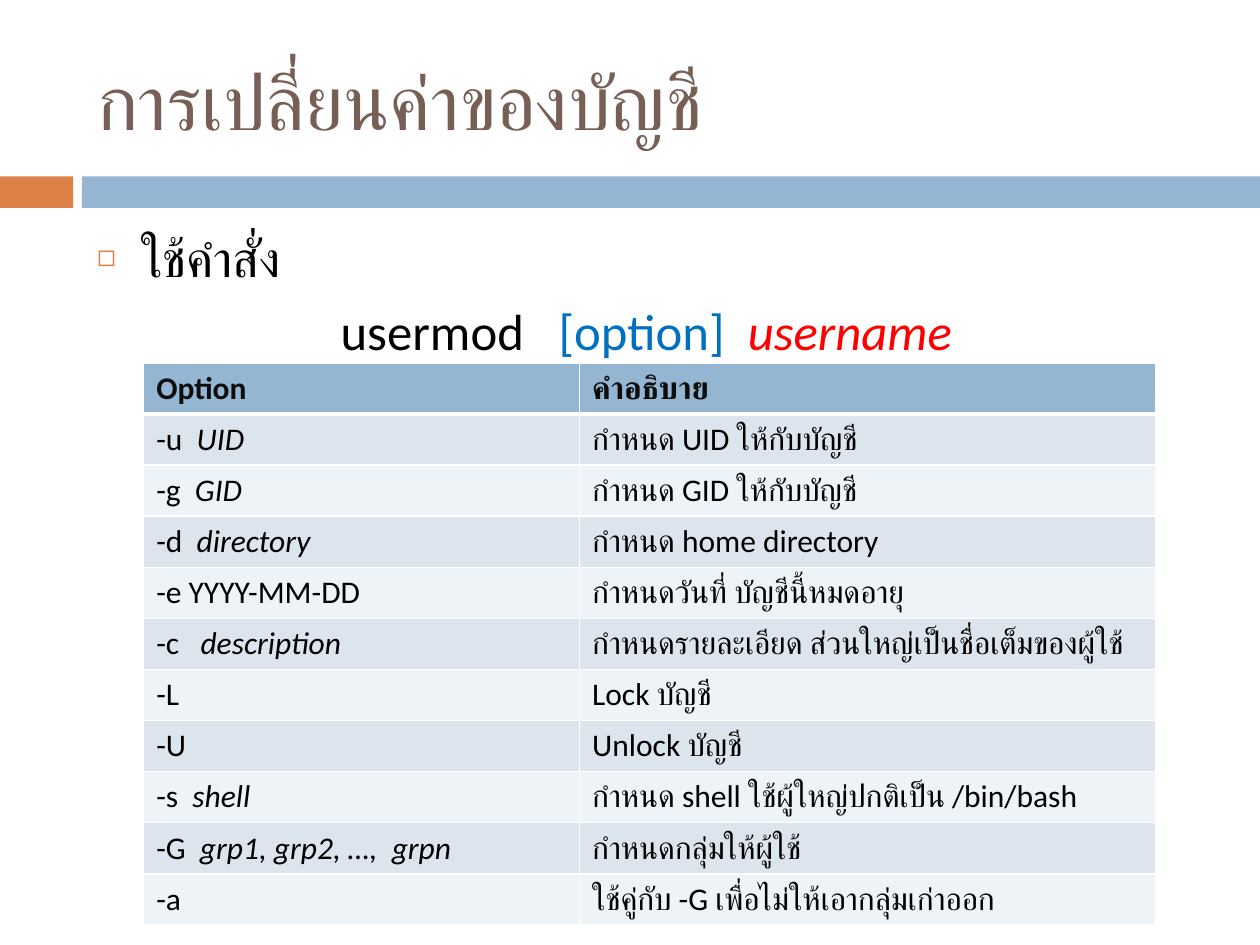
from lxml.etree import SubElement
from pptx import Presentation
from pptx.dml.color import RGBColor
from pptx.enum.shapes import MSO_SHAPE
from pptx.enum.text import MSO_ANCHOR, MSO_AUTO_SIZE, PP_ALIGN
from pptx.oxml.ns import qn
from pptx.util import Pt

SCALE = 9144
FONT = "Calibri"
BLUE, ORANGE, WHITE, BLACK = "94B6D2", "DD8047", "FFFFFF", "000000"
BANDS = "DCE5EE", "EEF3F7"
ROWS = [
    ("-u  ", "UID", "กำหนด UID ให้กับบัญชี"),
    ("-g  ", "GID", "กำหนด GID ให้กับบัญชี"),
    ("-d  ", "directory", "กำหนด home directory"),
    ("-e YYYY-MM-DD", "", "กำหนดวันที่ บัญชีนี้หมดอายุ"),
    ("-c  ", " description", "กำหนดรายละเอียด ส่วนใหญ่เป็นชื่อเต็มของผู้ใช้"),
    ("-L", "", "Lock บัญชี"),
    ("-U", "", "Unlock บัญชี"),
    ("-s", "  shell", "กำหนด shell ใช้ผู้ใหญ่ปกติเป็น /bin/bash"),
    ("-G", "  grp1, grp2, …,  grpn", "กำหนดกลุ่มให้ผู้ใช้"),
    ("-a", "", "ใช้คู่กับ -G เพื่อไม่ให้เอากลุ่มเก่าออก"),
]


def px(n):
    return round(n * SCALE)


def color(code):
    return RGBColor.from_string(code)


def write(para, text, size=18, tint=BLACK, bold=False, italic=False):
    run = para.add_run()
    run.text = text
    font = run.font
    font.name, font.size = FONT, Pt(size)
    font.bold, font.italic = bold, italic
    font.color.rgb = color(tint)
    SubElement(font._element, qn("a:cs"), typeface=FONT)


def place(shape, box):
    shape.left, shape.top, shape.width, shape.height = map(px, box)


def add_bar(slide, box, gap=7, lead=58):
    x, y, w, h = box
    start = x + lead + gap
    for left, wide, tint in ((x, lead, ORANGE), (start, x + w - start, BLUE)):
        bar = slide.shapes.add_shape(MSO_SHAPE.RECTANGLE, px(left), px(y), px(wide), px(h))
        bar.shadow.inherit = False
        bar.fill.solid()
        bar.fill.fore_color.rgb = color(tint)
        bar.line.fill.background()


def add_title(slide, box):
    title = slide.shapes.title
    place(title, box)
    frame = title.text_frame
    frame.auto_size = MSO_AUTO_SIZE.NONE
    frame.vertical_anchor = MSO_ANCHOR.MIDDLE
    para = frame.paragraphs[0]
    para.alignment = PP_ALIGN.LEFT
    write(para, "การเปลี่ยนค่าของบัญชี", size=44, tint="775F55")


def set_item(para, mark=None):
    para.space_before = Pt(7)
    props = para._p.get_or_add_pPr()
    props.set("marL", str(px(35)))
    props.set("indent", str(px(-35)))
    if mark:
        SubElement(SubElement(props, qn("a:buClr")), qn("a:srgbClr"), val=ORANGE)
        SubElement(props, qn("a:buSzPct"), val="60000")
        SubElement(props, qn("a:buFont"), typeface=FONT)
        SubElement(props, qn("a:buChar"), char=mark)
    else:
        SubElement(props, qn("a:buNone"))


def add_body(slide, box):
    body = slide.placeholders[1]
    place(body, box)
    frame = body.text_frame
    frame.auto_size = MSO_AUTO_SIZE.NONE
    first = frame.paragraphs[0]
    set_item(first, "◻")
    write(first, "ใช้คำสั่ง", size=29)
    usage = frame.add_paragraph()
    usage.alignment = PP_ALIGN.CENTER
    set_item(usage)
    write(usage, "usermod  ", size=29)
    write(usage, " [option]  ", size=29, tint="0070C0")
    write(usage, "username", size=29, tint="FF0000", italic=True)


def style_cell(cell, tint, base=1):
    props = cell._tc.get_or_add_tcPr()
    for side, width in (("L", 1), ("R", 1), ("T", 1), ("B", base)):
        line = SubElement(props, qn("a:ln" + side), w=str(Pt(width)))
        SubElement(SubElement(line, qn("a:solidFill")), qn("a:srgbClr"), val=WHITE)
    cell.fill.solid()
    cell.fill.fore_color.rgb = color(tint)


def add_grid(slide, box, left=346):
    x, y, w, h = map(px, box)
    grid = slide.shapes.add_table(len(ROWS) + 1, 2, x, y, w, h).table
    grid.columns[0].width = px(left)
    grid.columns[1].width = w - px(left)
    for col, text in enumerate(("Option", "คำอธิบาย")):
        cell = grid.cell(0, col)
        style_cell(cell, BLUE, base=3)
        write(cell.text_frame.paragraphs[0], text, tint="0D0D0D", bold=True)
    for row, (flag, value, note) in enumerate(ROWS, 1):
        option, detail = grid.cell(row, 0), grid.cell(row, 1)
        for cell in (option, detail):
            style_cell(cell, BANDS[(row - 1) % 2])
        para = option.text_frame.paragraphs[0]
        write(para, flag)
        if value:
            write(para, value, italic=True)
        write(detail.text_frame.paragraphs[0], note)


def main():
    deck = Presentation()
    deck.slide_width, deck.slide_height = px(1000), px(750)
    slide = deck.slides.add_slide(deck.slide_layouts[1])
    add_bar(slide, (0, 140, 1000, 25))
    add_title(slide, (67, 25, 892, 108))
    add_body(slide, (67, 175, 892, 492))
    add_grid(slide, (114, 288, 803, 446))
    deck.save("out.pptx")


if __name__ == "__main__":
    main()
